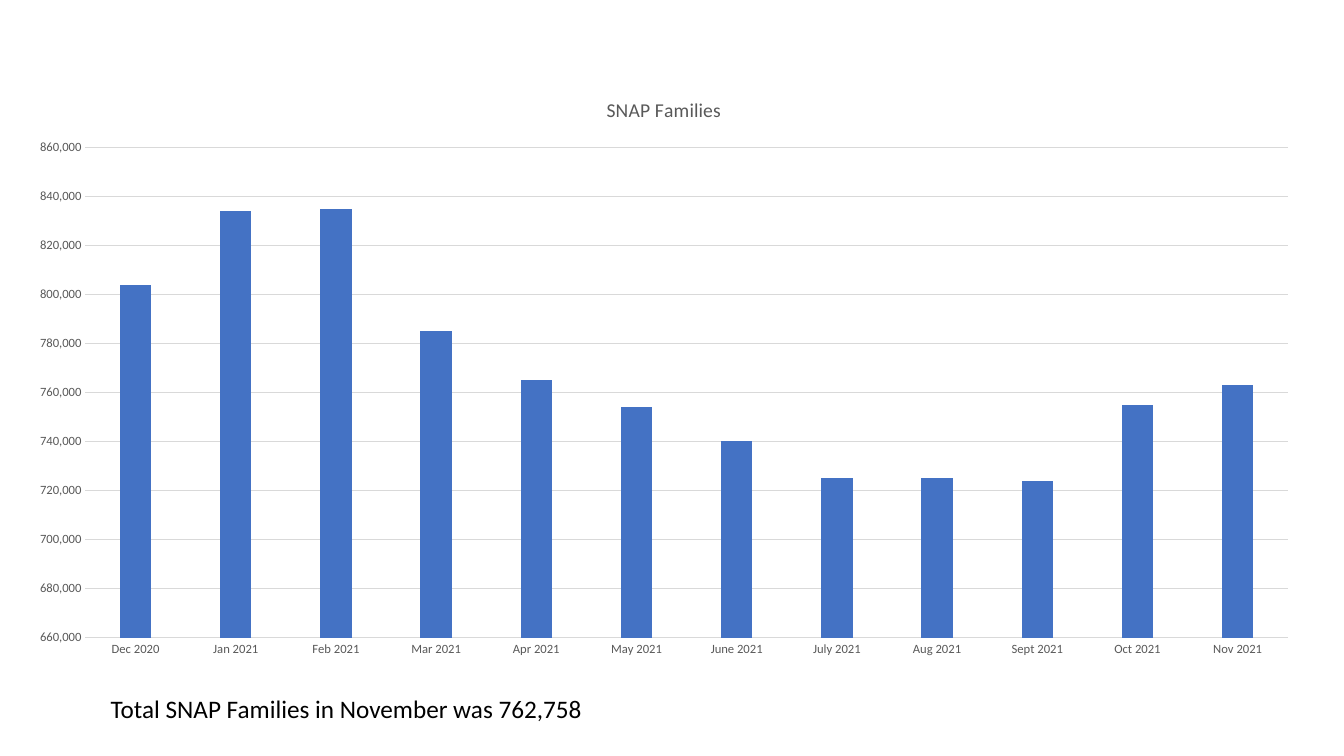
"""Build a slide with a column chart of monthly SNAP families and a closing total."""
from pptx import Presentation
from pptx.chart.data import CategoryChartData
from pptx.dml.color import RGBColor
from pptx.enum.chart import XL_CHART_TYPE as ChartType, XL_TICK_MARK as TickMark
from pptx.enum.text import MSO_AUTO_SIZE as AutoSize
from pptx.util import Pt

TITLE = "SNAP Families"
SUMMARY = "Total SNAP Families in November was 762,758"
FAMILIES = {
    "Dec 2020": 804000,
    "Jan 2021": 834000,
    "Feb 2021": 835000,
    "Mar 2021": 785000,
    "Apr 2021": 765000,
    "May 2021": 754000,
    "June 2021": 740000,
    "July 2021": 725000,
    "Aug 2021": 725000,
    "Sept 2021": 724000,
    "Oct 2021": 755000,
    "Nov 2021": 763000,
}
FONT = "Calibri"
COLORS = {"text": "000000", "label": "595959", "rule": "D9D9D9", "column": "4472C4"}
SLIDE_SIZE = (960, 540)
CHART_BOX = (10, 53.6, 928.4, 423.7)
SUMMARY_BOX = (72, 491.5, 638.6, 29)


def color(name):
    """Return the named colour."""
    return RGBColor.from_string(COLORS[name])


def style_font(font, size, name):
    """Set typeface, size and colour of a font."""
    font.name = FONT
    font.size = Pt(size)
    font.bold = False
    font.color.rgb = color(name)


def style_rule(line):
    """Give a chart line the thin grey look."""
    line.color.rgb = color("rule")
    line.width = Pt(0.75)


def add_families_chart(slide):
    """Add the monthly column chart."""
    data = CategoryChartData(number_format="#,##0")
    data.categories = list(FAMILIES)
    data.add_series(TITLE, list(FAMILIES.values()))
    box = [Pt(length) for length in CHART_BOX]
    chart = slide.shapes.add_chart(ChartType.COLUMN_CLUSTERED, *box, data).chart
    style_font(chart.font, 10, "text")
    chart.has_legend = False
    chart.has_title = True
    title_run = chart.chart_title.text_frame.paragraphs[0].add_run()
    title_run.text = TITLE
    style_font(title_run.font, 14, "label")
    chart.chart_title.include_in_layout = False

    plot = chart.plots[0]
    plot.gap_width = 219
    plot.overlap = -27
    plot.vary_by_categories = False
    fill = plot.series[0].format.fill
    fill.solid()
    fill.fore_color.rgb = color("column")

    months, values = chart.category_axis, chart.value_axis
    for axis in (months, values):
        axis.major_tick_mark = axis.minor_tick_mark = TickMark.NONE
        style_font(axis.tick_labels.font, 9, "label")
    style_rule(months.format.line)
    values.format.line.fill.background()
    values.has_major_gridlines = True
    style_rule(values.major_gridlines.format.line)
    values.minimum_scale, values.maximum_scale = 660000, 860000
    values.major_unit = 20000
    values.tick_labels.number_format = "#,##0"
    values.tick_labels.number_format_is_linked = False


def add_summary(slide):
    """Add the line of text under the chart."""
    frame = slide.shapes.add_textbox(*[Pt(length) for length in SUMMARY_BOX]).text_frame
    frame.word_wrap = True
    frame.auto_size = AutoSize.SHAPE_TO_FIT_TEXT
    run = frame.paragraphs[0].add_run()
    run.text = SUMMARY
    style_font(run.font, 18, "text")


def main():
    """Build and save the presentation."""
    presentation = Presentation()
    presentation.slide_width, presentation.slide_height = map(Pt, SLIDE_SIZE)
    slide = presentation.slides.add_slide(presentation.slide_layouts[6])
    add_families_chart(slide)
    add_summary(slide)
    presentation.save("out.pptx")


if __name__ == "__main__":
    main()
